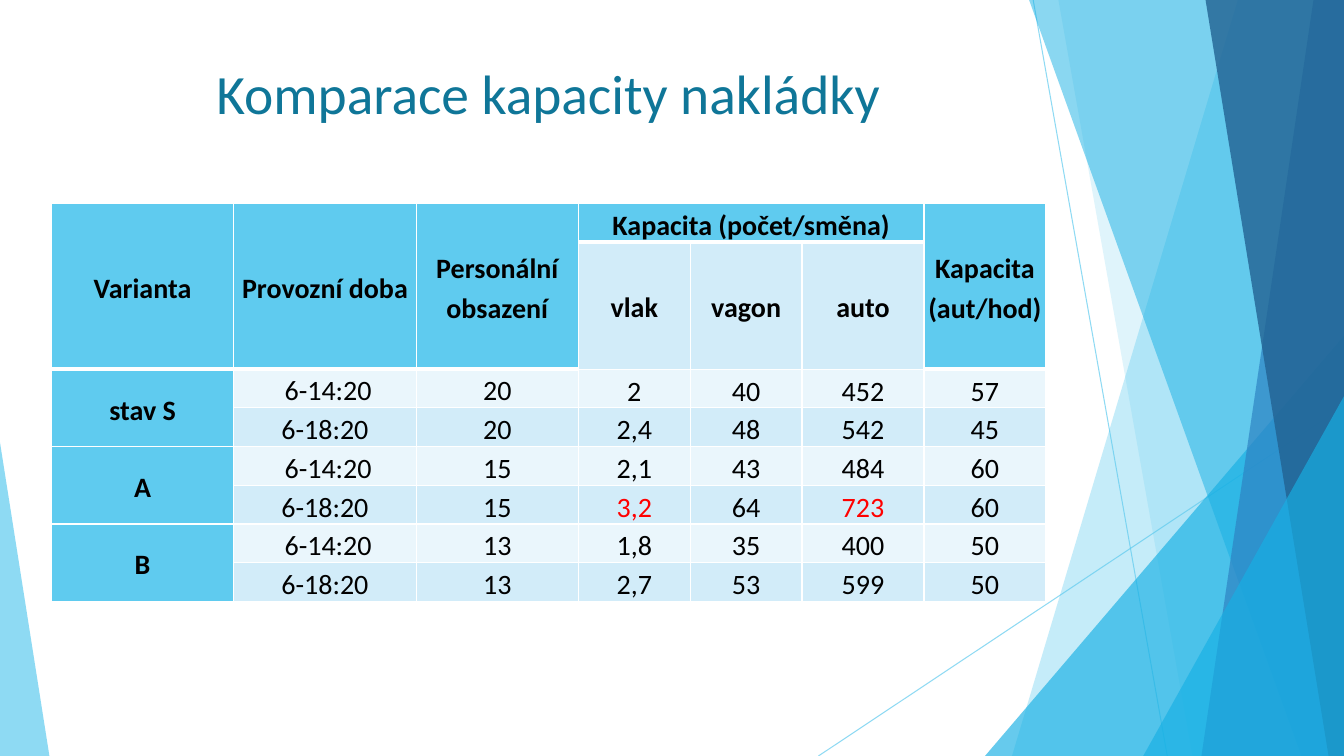
from dataclasses import dataclass

from lxml.etree import SubElement
from pptx import Presentation
from pptx.dml.color import RGBColor
from pptx.enum.shapes import MSO_CONNECTOR, MSO_SHAPE
from pptx.enum.text import MSO_ANCHOR as Anchor, PP_ALIGN as Align
from pptx.oxml.ns import qn
from pptx.util import Pt

SKY = RGBColor(0x5F, 0xCB, 0xEF)
CYAN = RGBColor(0x17, 0xB0, 0xE4)
BLUE = RGBColor(0x2E, 0x83, 0xC3)
NAVY = RGBColor(0x22, 0x62, 0x92)
TEAL = RGBColor(0x0F, 0x76, 0x98)
PALE = RGBColor(0xEA, 0xF6, 0xFC)
LIGHT = RGBColor(0xD2, 0xEC, 0xF9)
WHITE = RGBColor(0xFF, 0xFF, 0xFF)
BLACK = RGBColor(0, 0, 0)
RED = RGBColor(0xFF, 0, 0)

FONT = "Calibri"
WIDTH, HEIGHT = 960, 540


@dataclass
class Ray:
    x1: float
    y1: float
    x2: float
    y2: float


@dataclass
class Band:
    top_x: float
    bottom_x: float
    color: RGBColor
    alpha: int


@dataclass
class Wedge:
    left: float
    top: float
    width: float
    apex: float
    color: RGBColor
    alpha: int


RAYS = [Ray(738, 0, 833.8, HEIGHT), Ray(WIDTH, 290.2, 584.6, HEIGHT)]
FACETS = [
    Band(884.2, 722.9, SKY, 36),
    Band(756, 851.8, SKY, 20),
    Wedge(703.6, 239.8, 256.4, 1, CYAN, 66),
    Band(735.1, 929.5, CYAN, 50),
    Band(938.2, 858.2, BLUE, 70),
    Band(861.1, 949, NAVY, 80),
    Wedge(816.6, 283, 143.4, 1, CYAN, 66),
    Wedge(0, 316.1, 35.3, 0, SKY, 70),
]

COL_WIDTHS = [130.3, 130.3, 115.9, 79.9, 79.9, 87.1, 87.1]
HEADER_ROWS = 2
ROW_HEIGHTS = [27.4, 90.7] + [27.4] * 6
ROWS = [
    ["Varianta", "Provozní doba", "Personální obsazení", "Kapacita (počet/směna)", "", "", "Kapacita (aut/hod)"],
    ["", "", "", "vlak", "vagon", "auto", ""],
    ["stav S", " 6-14:20", "20", "2", "40", "452", "57"],
    ["", "6-18:20", "20", "2,4", "48", "542", "45"],
    ["A", " 6-14:20", "15", "2,1", "43", "484", "60"],
    ["", "6-18:20", "15", "3,2", "64", "723", "60"],
    ["B", " 6-14:20", "13", "1,8", "35", "400", "50"],
    ["", "6-18:20", "13", "2,7", "53", "599", "50"],
]
GROUP_COLS = range(3, 6)
TALL_HEADERS = (0, 1, 2, 6)
SPANS = [(0, c, 1, c) for c in TALL_HEADERS] + [(0, 3, 0, 5)] + [(r, 0, r + 1, 0) for r in (2, 4, 6)]
THICK_BELOW = {(0, c) for c in range(7)} | {(1, c) for c in TALL_HEADERS}
RED_CELLS = {(5, 3), (5, 5)}


def set_alpha(fill_parent, alpha: int) -> None:
    color = fill_parent.find(".//" + qn("a:srgbClr"))
    SubElement(color, qn("a:alpha"), val=str(alpha * 1000))


def add_ray(s, ray: Ray) -> None:
    line = s.shapes.add_connector(MSO_CONNECTOR.STRAIGHT, Pt(ray.x1), Pt(ray.y1), Pt(ray.x2), Pt(ray.y2))
    line.line.color.rgb = SKY
    line.line.width = Pt(0.75)
    sp_pr = line._element.spPr
    set_alpha(sp_pr, 70)
    SubElement(sp_pr, qn("a:effectLst"))


def add_facet(s, facet: Band | Wedge) -> None:
    if isinstance(facet, Band):
        builder = s.shapes.build_freeform(Pt(facet.top_x), 0)
        corners = [(WIDTH, 0), (WIDTH, HEIGHT), (facet.bottom_x, HEIGHT)]
        builder.add_line_segments([(Pt(x), Pt(y)) for x, y in corners])
        sp = builder.convert_to_shape()
    else:
        sp = s.shapes.add_shape(MSO_SHAPE.ISOSCELES_TRIANGLE, Pt(facet.left), Pt(facet.top),
                                Pt(facet.width), Pt(HEIGHT - facet.top))
        sp.adjustments[0] = facet.apex
    sp.shadow.inherit = False
    sp.line.fill.background()
    sp.fill.solid()
    sp.fill.fore_color.rgb = facet.color
    set_alpha(sp._element.spPr, facet.alpha)


def add_text(p, text: str, size: float, color: RGBColor, bold: bool = False) -> None:
    p.alignment = Align.CENTER
    r = p.add_run()
    r.text = text
    r.font.name, r.font.size, r.font.bold = FONT, Pt(size), bold
    r.font.color.rgb = color


def add_title(s, text: str) -> None:
    tf = s.shapes.add_textbox(Pt(53.3), Pt(34.6), Pt(676.8), Pt(100.8)).text_frame
    tf.word_wrap = True
    tf.vertical_anchor = Anchor.BOTTOM
    tf.margin_bottom = Pt(45.4)
    add_text(tf.paragraphs[0], text, 39.6, TEAL)


def set_borders(cell, row: int, col: int) -> None:
    widths = {"L": 1, "R": 1,
              "T": 3 if (row - 1, col) in THICK_BELOW else 1,
              "B": 3 if (row, col) in THICK_BELOW else 1}
    tc_pr = cell._tc.get_or_add_tcPr()
    for side, width in widths.items():
        ln = SubElement(tc_pr, qn(f"a:ln{side}"), w=str(Pt(width)))
        SubElement(SubElement(ln, qn("a:solidFill")), qn("a:srgbClr"), val=str(WHITE))


def cell_fill(row: int, col: int) -> RGBColor:
    if row == 0 or col == 0 or (row == 1 and col not in GROUP_COLS):
        return SKY
    return LIGHT if row % 2 else PALE


def style_cell(cell, row: int, col: int) -> None:
    set_borders(cell, row, col)
    cell.fill.solid()
    cell.fill.fore_color.rgb = cell_fill(row, col)
    cell.margin_left = cell.margin_right = Pt(2.2)
    cell.margin_top = cell.margin_bottom = 0
    is_time_or_staff = row >= HEADER_ROWS and col in (1, 2)
    cell.vertical_anchor = Anchor.BOTTOM if is_time_or_staff else Anchor.MIDDLE
    if ROWS[row][col]:
        p = cell.text_frame.paragraphs[0]
        p.line_spacing = 1.15
        color = RED if (row, col) in RED_CELLS else BLACK
        add_text(p, ROWS[row][col], 20, color, row < HEADER_ROWS or col == 0)


def add_capacity_table(s) -> None:
    frame = s.shapes.add_table(len(ROWS), len(COL_WIDTHS), Pt(36.7), Pt(145.4),
                               Pt(sum(COL_WIDTHS)), Pt(sum(ROW_HEIGHTS)))
    table = frame.table
    for column, width in zip(table.columns, COL_WIDTHS):
        column.width = Pt(width)
    for table_row, height in zip(table.rows, ROW_HEIGHTS):
        table_row.height = Pt(height)
    for row in range(len(ROWS)):
        for col in range(len(COL_WIDTHS)):
            style_cell(table.cell(row, col), row, col)
    for top, left, bottom, right in SPANS:
        table.cell(top, left).merge(table.cell(bottom, right))


def main() -> None:
    prs = Presentation()
    prs.slide_width, prs.slide_height = Pt(WIDTH), Pt(HEIGHT)
    s = prs.slides.add_slide(prs.slide_layouts[6])
    for ray in RAYS:
        add_ray(s, ray)
    for facet in FACETS:
        add_facet(s, facet)
    add_title(s, "Komparace kapacity nakládky")
    add_capacity_table(s)
    prs.save("out.pptx")


if __name__ == "__main__":
    main()
